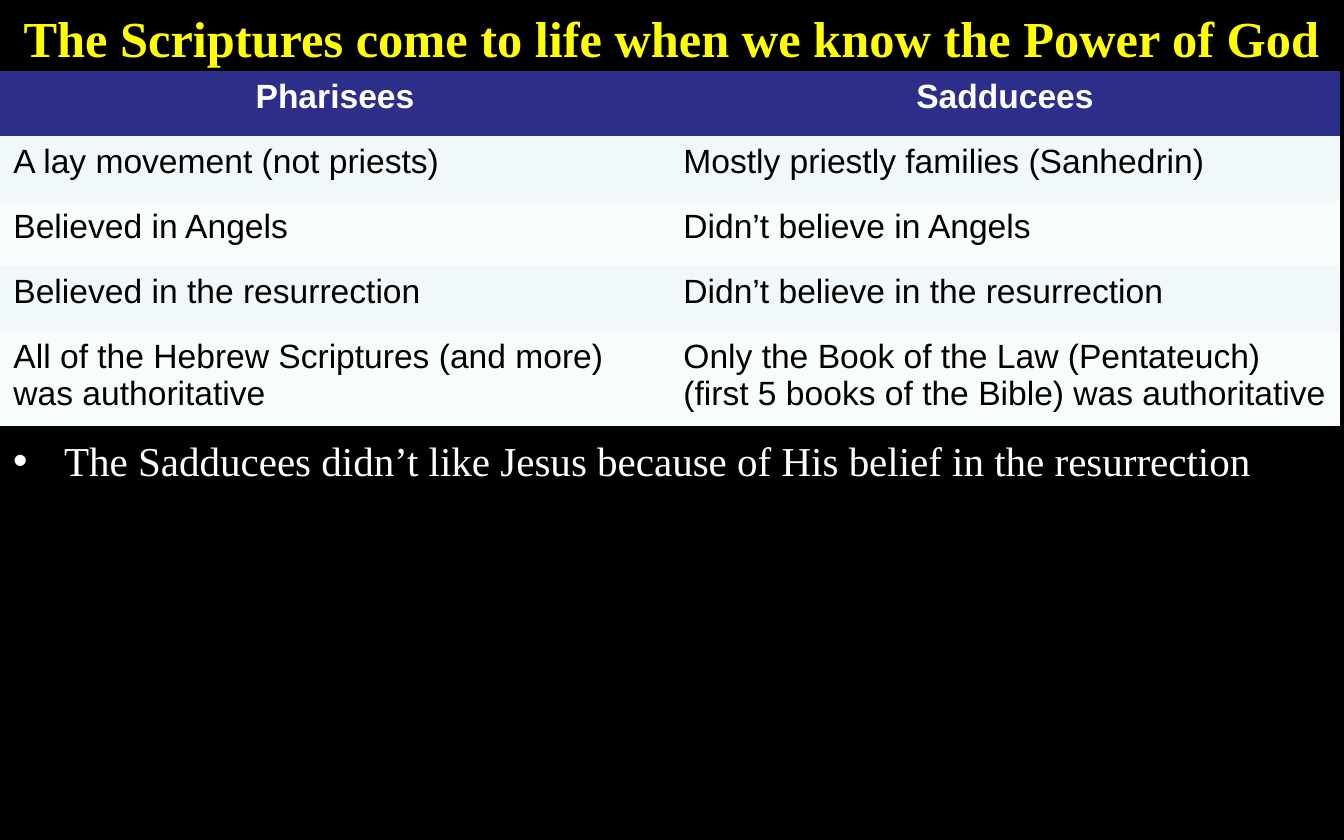
from dataclasses import dataclass
from typing import NamedTuple

from pptx import Presentation
from pptx.dml.color import RGBColor
from pptx.enum.text import MSO_AUTO_SIZE as AutoSize, PP_ALIGN as Align
from pptx.oxml.ns import qn
from pptx.util import Emu, Pt

EMU_PER_PX = 914400 / 134.4
NO_GRID_STYLE = "{2D5ABB26-0587-4C30-8999-92F81FD0307C}"


@dataclass(frozen=True)
class Theme:
    background: str = "000000"
    title: str = "FFFF00"
    light: str = "FFFFFF"
    dark: str = "000000"
    header: str = "2D2D8A"
    bands: tuple[str, str] = ("F1F8F9", "F8FCFC")
    serif: str = "Times New Roman"
    sans: str = "Arial"
    title_pt: int = 27
    bullet_pt: int = 22
    table_pt: int = 18


class Box(NamedTuple):
    x: int
    y: int
    w: int
    h: int


class Contrast(NamedTuple):
    pharisees: str
    sadducees: str


THEME = Theme()
HEADINGS = Contrast("Pharisees", "Sadducees")
CONTRASTS = [
    Contrast("A lay movement (not priests)", "Mostly priestly families (Sanhedrin)"),
    Contrast("Believed in Angels", "Didn’t believe in Angels"),
    Contrast("Believed in the resurrection", "Didn’t believe in the resurrection"),
    Contrast("All of the Hebrew Scriptures (and more) was authoritative",
             "Only the Book of the Law (Pentateuch) (first 5 books of the Bible) was authoritative"),
]
ROW_H, LAST_ROW_H = 65, 95


def px(n: int) -> Emu:
    return Emu(round(n * EMU_PER_PX))


def write(tf, text: str, *, size: int, font: str, color: str,
          bold: bool = False, align: Align = Align.LEFT):
    """Fill a text frame with one formatted paragraph and return it."""
    tf.word_wrap = True
    p = tf.paragraphs[0]
    p.alignment = align
    r = p.add_run()
    r.text = text
    r.font.size, r.font.name, r.font.bold = Pt(size), font, bold
    r.font.color.rgb = RGBColor.from_string(color)
    return p


def add_text(slide, box: Box, text: str, **fmt):
    tf = slide.shapes.add_textbox(*map(px, box)).text_frame
    p = write(tf, text, **fmt)
    tf.auto_size = AutoSize.SHAPE_TO_FIT_TEXT
    return p


def add_bullet(p, indent: int) -> None:
    pPr = p._p.get_or_add_pPr()
    pPr.set("marL", str(px(indent)))
    pPr.set("indent", str(-px(indent)))
    bullet_font = pPr.makeelement(qn("a:buFont"), {"typeface": "Arial"})
    bullet = pPr.makeelement(qn("a:buChar"), {"char": "•"})
    pPr.extend([bullet_font, bullet])


def add_contrast_table(slide, box: Box, rows: list[Contrast]) -> None:
    table = slide.shapes.add_table(len(rows), 2, *map(px, box)).table
    table._tbl.tblPr.find(qn("a:tableStyleId")).text = NO_GRID_STYLE
    table.horz_banding = False
    for col in table.columns:
        col.width = px(box.w // 2)
    for i, row in enumerate(rows):
        table.rows[i].height = px(LAST_ROW_H if i == len(rows) - 1 else ROW_H)
        header = i == 0
        fill = THEME.header if header else THEME.bands[(i - 1) % 2]
        for j, text in enumerate(row):
            cell = table.cell(i, j)
            cell.fill.solid()
            cell.fill.fore_color.rgb = RGBColor.from_string(fill)
            write(cell.text_frame, text, size=THEME.table_pt, font=THEME.sans,
                  color=THEME.light if header else THEME.dark, bold=header,
                  align=Align.CENTER if header else Align.LEFT)


def main() -> None:
    prs = Presentation()
    prs.slide_width, prs.slide_height = px(1344), px(840)
    slide = prs.slides.add_slide(prs.slide_layouts[6])
    slide.background.fill.solid()
    slide.background.fill.fore_color.rgb = RGBColor.from_string(THEME.background)

    # Title
    add_text(slide, Box(-1, 0, 1345, 75),
             "The Scriptures come to life when we know the Power of God",
             size=THEME.title_pt, font=THEME.serif, color=THEME.title,
             bold=True, align=Align.CENTER)

    # Closing point
    p = add_text(slide, Box(0, 429, 1321, 63),
                 "The Sadducees didn’t like Jesus because of His belief in the resurrection",
                 size=THEME.bullet_pt, font=THEME.serif, color=THEME.light)
    add_bullet(p, indent=51)

    # Comparison table
    rows = [HEADINGS, *CONTRASTS]
    height = ROW_H * (len(rows) - 1) + LAST_ROW_H
    add_contrast_table(slide, Box(0, 71, 1340, height), rows)

    prs.save("out.pptx")


if __name__ == "__main__":
    main()
